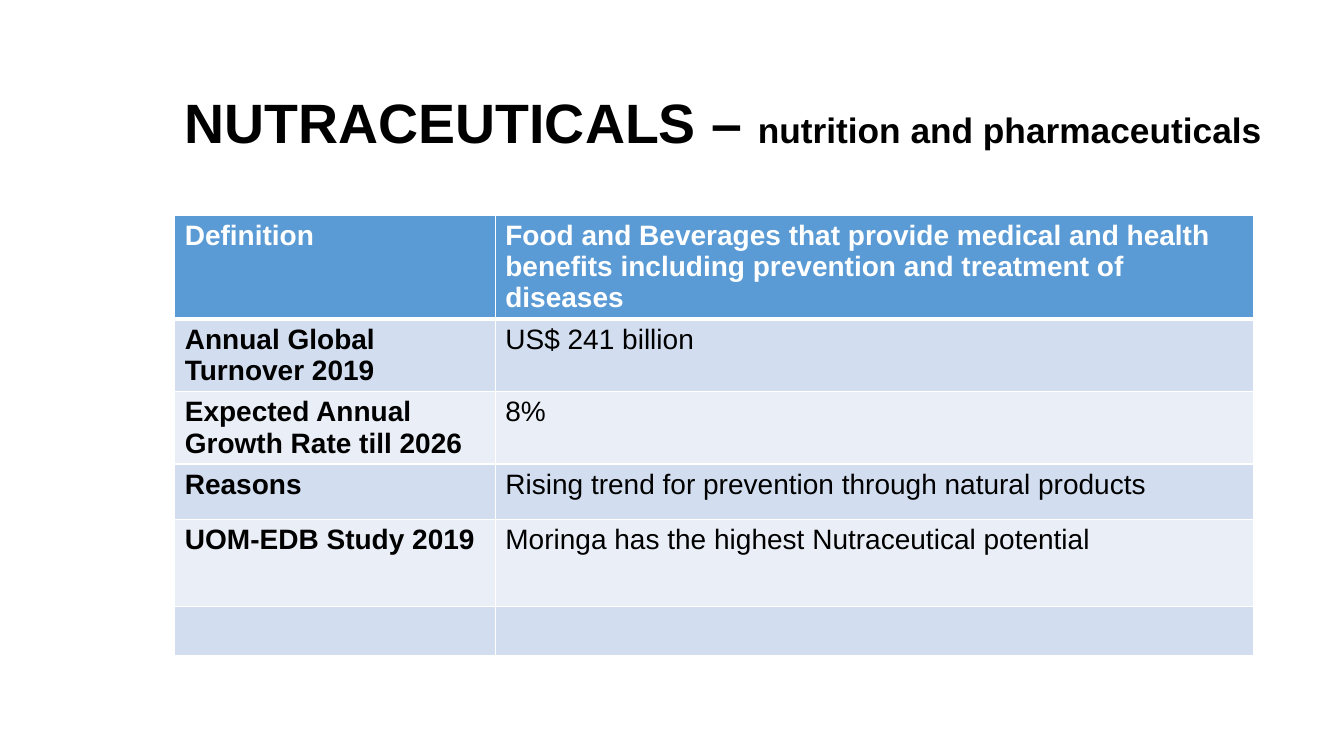
from typing import NamedTuple

from lxml.etree import SubElement
from pptx import Presentation
from pptx.dml.color import RGBColor
from pptx.enum.text import MSO_ANCHOR, MSO_AUTO_SIZE, PP_ALIGN
from pptx.oxml.ns import qn
from pptx.util import Inches, Pt

COLORS = {
    "header": "5B9BD5",
    "band_dark": "D2DEEF",
    "band_light": "EAEFF7",
    "black": "000000",
    "white": "FFFFFF",
}
FONT = "Arial"
GRID_COLS, GRID_ROWS = 400, 225


class Box(NamedTuple):
    col: float
    row: float
    cols: float
    rows: float


class Row(NamedTuple):
    label: str
    detail: str
    rows: float


TITLE_BOX = Box(52, 22, 345, 31)
TITLE_RUNS = [("NUTRACEUTICALS – ", 39.6), ("nutrition and pharmaceuticals", 25.2)]
COLUMNS = [95.4, 225.6]
TABLE_ROWS = [
    Row("Definition", "Food and Beverages that provide medical and health benefits "
        "including prevention and treatment of diseases", 29),
    Row("Annual Global Turnover 2019", "US$ 241 billion", 21),
    Row("Expected Annual Growth Rate till 2026", "8%", 20.4),
    Row("Reasons", "Rising trend for prevention through natural products", 16.5),
    Row("UOM-EDB Study 2019", "Moringa has the highest Nutraceutical potential", 26),
    Row("", "", 14.4),
]
TABLE_BOX = Box(52, 64, sum(COLUMNS), sum(row.rows for row in TABLE_ROWS))

prs = Presentation()
prs.slide_width, prs.slide_height = Inches(13.33), Inches(7.5)


def across(cols: float) -> int:
    return round(prs.slide_width * cols / GRID_COLS)


def down(rows: float) -> int:
    return round(prs.slide_height * rows / GRID_ROWS)


def place(box: Box) -> tuple:
    return across(box.col), down(box.row), across(box.cols), down(box.rows)


def add_run(p, text: str, size: float, color: str, bold: bool = True) -> None:
    r = p.add_run()
    r.text = text
    for name, value in {"name": FONT, "size": Pt(size), "bold": bold}.items():
        setattr(r.font, name, value)
    r.font.color.rgb = RGBColor.from_string(COLORS[color])


def set_borders(cell, widths: dict) -> None:
    tcPr = cell._tc.get_or_add_tcPr()
    for side, width in widths.items():
        ln = SubElement(tcPr, qn(f"a:ln{side}"), w=str(Pt(width)))
        fill = SubElement(ln, qn("a:solidFill"))
        SubElement(fill, qn("a:srgbClr"), val=COLORS["white"])


def add_title(s) -> None:
    sp = s.shapes.title
    sp.left, sp.top, sp.width, sp.height = place(TITLE_BOX)
    tf = sp.text_frame
    frame_format = {"word_wrap": True, "auto_size": MSO_AUTO_SIZE.NONE,
                    "vertical_anchor": MSO_ANCHOR.MIDDLE}
    for name, value in frame_format.items():
        setattr(tf, name, value)
    p = tf.paragraphs[0]
    p.alignment, p.line_spacing = PP_ALIGN.LEFT, 0.9
    for text, size in TITLE_RUNS:
        add_run(p, text, size, "black")


def add_table(s) -> None:
    table = s.shapes.add_table(len(TABLE_ROWS), len(COLUMNS), *place(TABLE_BOX)).table
    for column, cols in zip(table.columns, COLUMNS):
        column.width = across(cols)
    for i, row in enumerate(TABLE_ROWS):
        table.rows[i].height = down(row.rows)
        header = i == 0
        band = "header" if header else "band_dark" if i % 2 else "band_light"
        # The rule under the header is thicker than the other borders
        widths = {"L": 1, "R": 1, "T": 3 if i == 1 else 1, "B": 3 if header else 1}
        for j, text in enumerate((row.label, row.detail)):
            cell = table.cell(i, j)
            set_borders(cell, widths)
            cell.fill.solid()
            cell.fill.fore_color.rgb = RGBColor.from_string(COLORS[band])
            if text:
                add_run(cell.text_frame.paragraphs[0], text, 20,
                        "white" if header else "black", bold=header or j == 0)


def main() -> None:
    s = prs.slides.add_slide(prs.slide_layouts[5])
    # Heading
    add_title(s)
    # Facts table
    add_table(s)
    prs.save("out.pptx")


if __name__ == "__main__":
    main()
